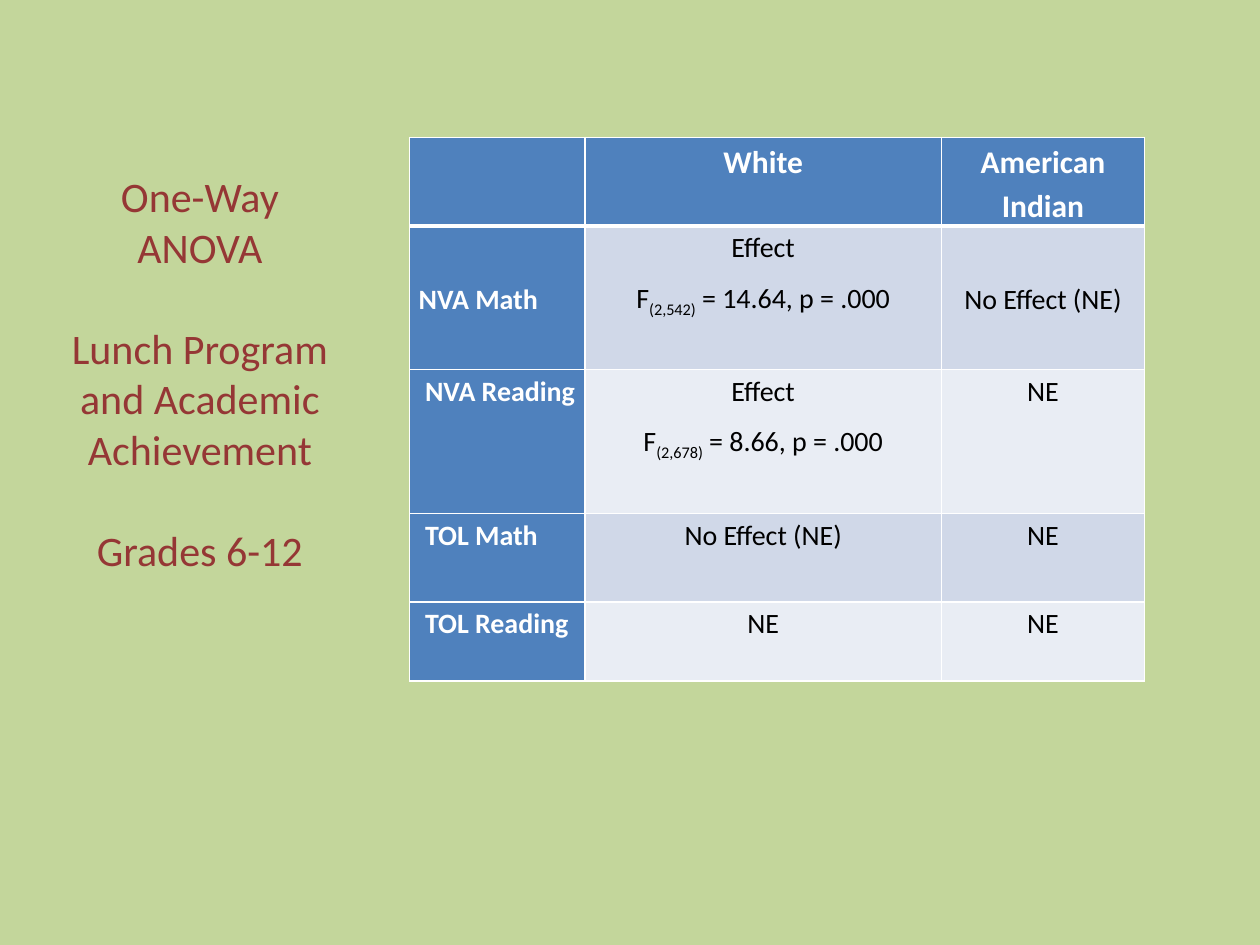
from lxml import etree
from pptx import Presentation
from pptx.dml.color import RGBColor
from pptx.enum.text import MSO_ANCHOR, PP_ALIGN
from pptx.oxml.ns import qn
from pptx.util import Cm, Pt

CENTER, LEFT = PP_ALIGN.CENTER, PP_ALIGN.LEFT
TOP, MIDDLE = MSO_ANCHOR.TOP, MSO_ANCHOR.MIDDLE
FONT = "Calibri"
BLUE, WHITE, BLACK = "4F81BD", "FFFFFF", "000000"
BANDS = ["D0D8E8", "E9EDF4"]


def rgb(value):
    return RGBColor.from_string(value)


def add_border(cell, side, width):
    ln = etree.SubElement(cell._tc.get_or_add_tcPr(), qn(f"a:{side}"), w=str(Pt(width)))
    fill = etree.SubElement(ln, qn("a:solidFill"))
    etree.SubElement(fill, qn("a:srgbClr"), val=WHITE)


prs = Presentation()
prs.slide_width, prs.slide_height = Cm(25.4), Cm(19.05)
s = prs.slides.add_slide(prs.slide_layouts[5])
s.background.fill.solid()
s.background.fill.fore_color.rgb = rgb("C3D69B")

# Title, its three parts set apart by one line
title = s.shapes.title
title.left, title.top, title.width, title.height = Cm(1.07), Cm(2.97), Cm(5.92), Cm(9.09)
tf = title.text_frame
tf.word_wrap = True
tf.vertical_anchor = MIDDLE
tf.text = "One-Way ANOVA\nLunch Program and Academic Achievement\nGrades 6-12"
for i, p in enumerate(tf.paragraphs):
    p.alignment = CENTER
    p.space_before = Pt(29 if i else 0)
    p.font.name, p.font.size = FONT, Pt(24)
    p.font.color.rgb = rgb("953735")

# Table contents: a cell is a list of paragraphs, a tuple holds
# the text before, in and after a subscript
rows = [
    [[], ["White"], ["American Indian"]],
    [["NVA Math"], ["Effect", ("F", "(2,542)", " = 14.64, p = .000")], ["No Effect (NE)"]],
    [["NVA Reading"], ["Effect", ("F", "(2,678)", " = 8.66, p = .000")], ["NE"]],
    [["TOL Math"], ["No Effect (NE)"], ["NE"]],
    [["TOL Reading"], ["NE"], ["NE"]],
]
widths = [3.53, 7.19, 4.09]
heights = [1.78, 2.9, 2.9, 1.78, 1.6]
table = s.shapes.add_table(len(rows), len(widths), Cm(8.26), Cm(2.77),
                           Cm(sum(widths)), Cm(sum(heights))).table
for column, width in zip(table.columns, widths):
    column.width = Cm(width)
for row, height in zip(table.rows, heights):
    row.height = Cm(height)

for r_no, row in enumerate(rows):
    for c_no, paragraphs in enumerate(row):
        cell = table.cell(r_no, c_no)
        is_head = r_no == 0 or c_no == 0

        # Borders come before the fill in the cell's XML
        add_border(cell, "lnL", 1)
        add_border(cell, "lnR", 1)
        add_border(cell, "lnT", 3 if r_no == 1 else 1)
        add_border(cell, "lnB", 3 if r_no == 0 else 1)
        cell.fill.solid()
        cell.fill.fore_color.rgb = rgb(BLUE if is_head else BANDS[(r_no - 1) % 2])

        cell.margin_left = cell.margin_right = Cm(0.18)
        cell.margin_top = cell.margin_bottom = 0
        # The one-line cells of the first body row sit halfway down
        cell.vertical_anchor = MIDDLE if r_no == 1 and len(paragraphs) == 1 else TOP

        for i, text in enumerate(paragraphs):
            tf = cell.text_frame
            p = tf.add_paragraph() if i else tf.paragraphs[0]
            p.alignment = LEFT if c_no == 0 else CENTER
            p.line_spacing, p.space_after = 1.15, Pt(6)
            p.font.name, p.font.size = FONT, Pt(16 if r_no else 18)
            p.font.bold = is_head
            p.font.color.rgb = rgb(WHITE if is_head else BLACK)
            if c_no == 0 and r_no > 1:
                p._p.get_or_add_pPr().set("indent", str(Cm(0.13)))
            parts = text if isinstance(text, tuple) else (text,)
            for j, part in enumerate(parts):
                r = p.add_run()
                r.text = part
                if j == 1:
                    r.font._element.set("baseline", "-25000")

prs.save("out.pptx")
